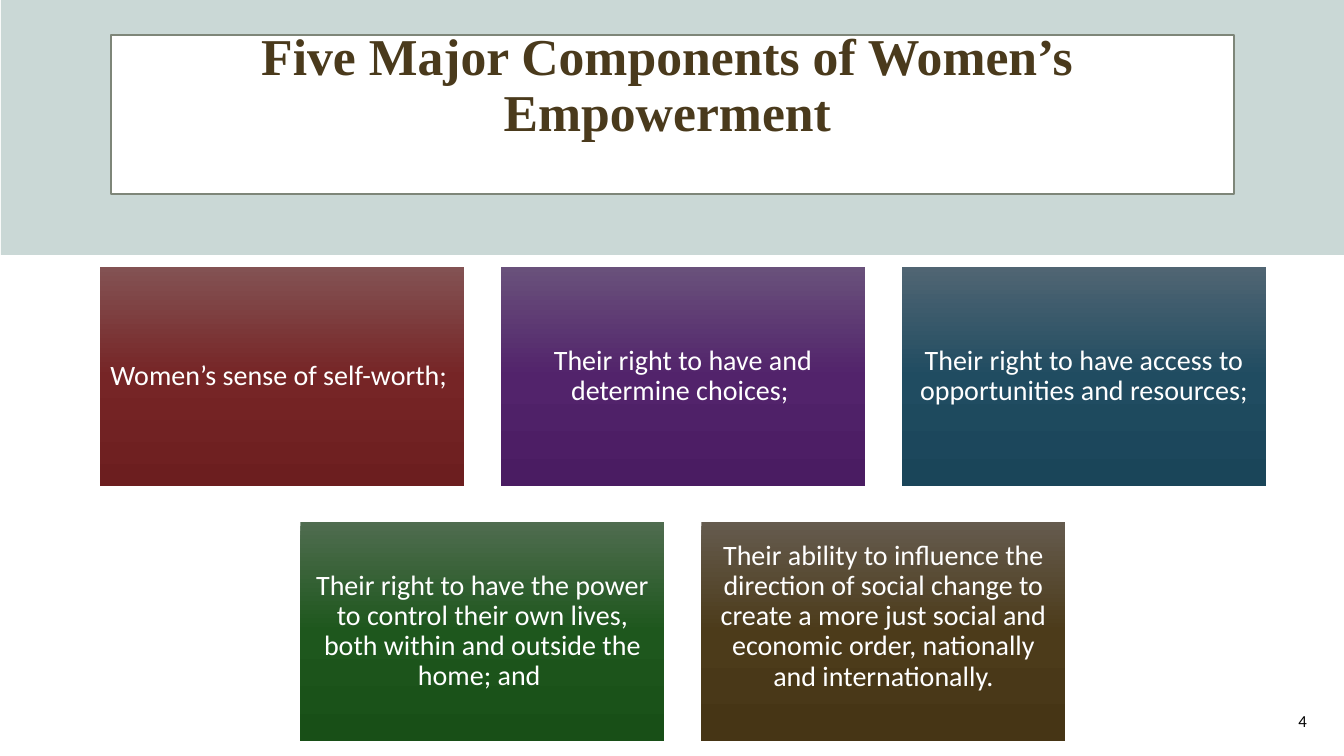
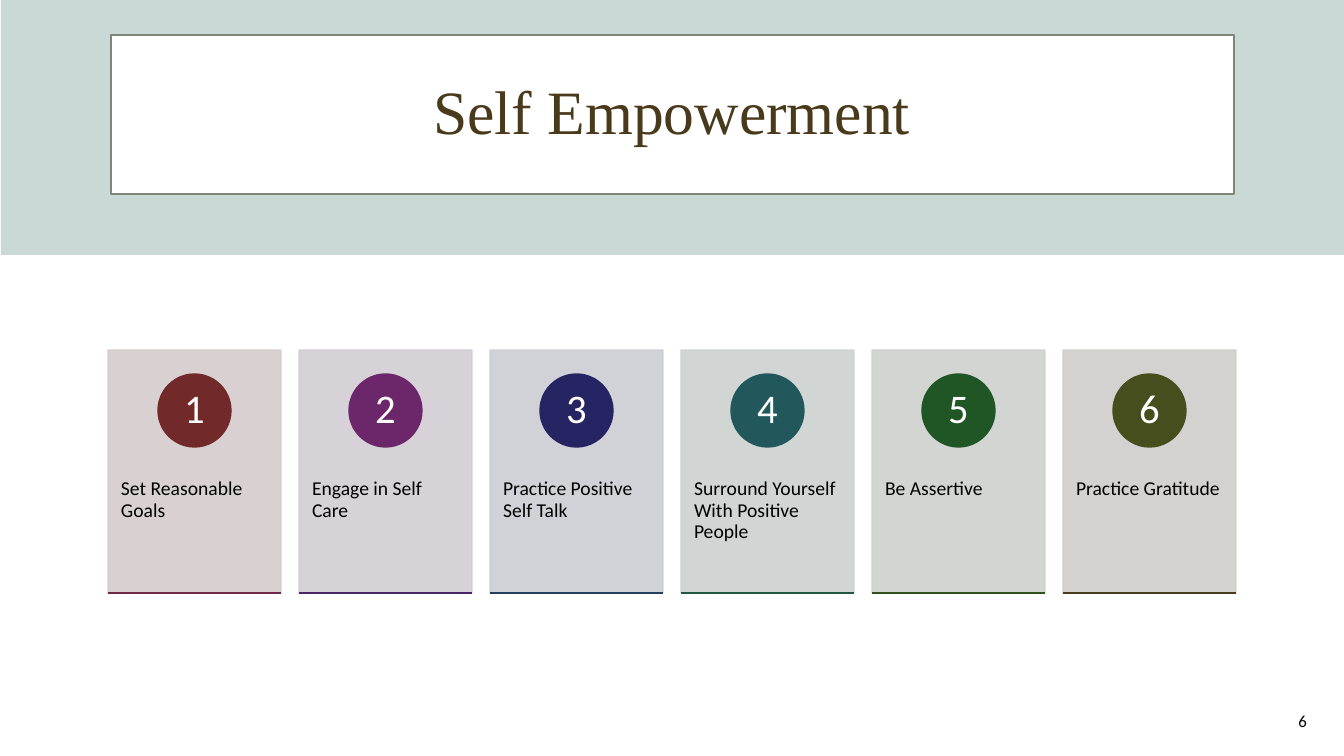
from copy import deepcopy

from pptx import Presentation
from pptx import util as u
from pptx.dml.color import RGBColor
from pptx.enum import shapes, text
from pptx.oxml.ns import qn

PX = 914400 / 100.8
SLIDE_WIDTH, SLIDE_HEIGHT = 1344, 756

WHITE = RGBColor(0xFF, 0xFF, 0xFF)
BLACK = RGBColor(0x00, 0x00, 0x00)
BAND = RGBColor(0xCA, 0xD8, 0xD6)
FRAME_LINE = RGBColor(0x7E, 0x86, 0x79)
TITLE_BROWN = RGBColor(0x4A, 0x3A, 0x1C)
REDS = RGBColor(0x83, 0x52, 0x53), RGBColor(0x76, 0x25, 0x26), RGBColor(0x6C, 0x1E, 0x1F)
PURPLES = RGBColor(0x69, 0x51, 0x7B), RGBColor(0x52, 0x23, 0x6B), RGBColor(0x4A, 0x1C, 0x62)
BLUES = RGBColor(0x50, 0x65, 0x73), RGBColor(0x20, 0x4C, 0x61), RGBColor(0x1A, 0x45, 0x59)
GREENS = RGBColor(0x4F, 0x6C, 0x4F), RGBColor(0x1E, 0x57, 0x1D), RGBColor(0x18, 0x4F, 0x17)
BROWNS = RGBColor(0x65, 0x5B, 0x4E), RGBColor(0x4C, 0x3B, 0x1A), RGBColor(0x46, 0x35, 0x15)

TITLE_FONT, BODY_FONT = "Times New Roman", "Calibri"
CENTER, RIGHT, LEFT = text.PP_ALIGN.CENTER, text.PP_ALIGN.RIGHT, text.PP_ALIGN.LEFT
MIDDLE, TOP = text.MSO_ANCHOR.MIDDLE, text.MSO_ANCHOR.TOP
RECTANGLE, OVAL = shapes.MSO_SHAPE.RECTANGLE, shapes.MSO_SHAPE.OVAL

COMPONENT_ROWS = [
    (267, [
        ("Women’s sense of self-worth; ", REDS, 8),
        ("Their right to have and determine choices; ", PURPLES, 8),
        ("Their right to have access to opportunities and resources;", BLUES, 8),
    ]),
    (522, [
        ("Their right to have the power to control their own lives, "
         "both within and outside the home; and ", GREENS, 8),
        ("Their ability to influence the direction of social change to create "
         "a more just social and economic order, nationally and internationally.",
         BROWNS, 38),
    ]),
]
CARD_WIDTH, CARD_HEIGHT, CARD_GAP, CARDS_CENTER = 364, 219, 37, 683

STEPS = [
    ("Set Reasonable Goals", "D5CDCD", "72292A", "6E284B"),
    ("Engage in Self Care", "D3CDD4", "6B276A", "482667"),
    ("Practice Positive Self Talk", "CDCED3", "272463", "233E60"),
    ("Surround Yourself With Positive People", "CDD2D0", "22585C", "215842"),
    ("Be Assertive", "CED1CD", "205525", "32511E"),
    ("Practice Gratitude", "CFCECC", "474E1D", "4A3A1C"),
]
PANEL_LEFT, PANEL_TOP, PANEL_WIDTH, PANEL_HEIGHT, PANEL_PITCH = 108, 350, 173, 243, 191
CIRCLE_SIZE, CIRCLE_TOP = 73, 374


def px(*lengths):
    return [u.Emu(round(length * PX)) for length in lengths]


def write(shape, words, size, color, font=BODY_FONT, align=CENTER, anchor=MIDDLE,
          insets=(8, 8, 8, 8), bold=False, spacing=0.9):
    frame = shape.text_frame
    frame.word_wrap = True
    frame.vertical_anchor = anchor
    (frame.margin_left, frame.margin_top,
     frame.margin_right, frame.margin_bottom) = px(*insets)
    paragraph = frame.paragraphs[0]
    paragraph.alignment = align
    paragraph.line_spacing = spacing
    run = paragraph.add_run()
    run.text = words
    run.font.name = font
    run.font.size = u.Pt(size)
    run.font.bold = bold
    run.font.color.rgb = color


def add_block(slide, kind, box, fill=None, line=None):
    shape = slide.shapes.add_shape(kind, *px(*box))
    shape.shadow.inherit = False
    if fill is not None:
        shape.fill.solid()
        shape.fill.fore_color.rgb = fill
    if line is None:
        shape.line.fill.background()
    else:
        shape.line.color.rgb = line
        shape.line.width = u.Pt(1)
    return shape


def fade_down(shape, colors):
    fill = shape.fill
    fill.gradient()
    fill.gradient_angle = 270
    stop_list = shape._element.spPr.find(".//" + qn("a:gsLst"))
    stop_list.append(deepcopy(stop_list[0]))
    for stop, color, position in zip(fill.gradient_stops, colors, (0, 0.5, 1)):
        stop.color.rgb = color
        stop.position = position


def make_translucent(shape, percent):
    for color in shape._element.spPr.iter(qn("a:srgbClr")):
        alpha = color.makeelement(qn("a:alpha"), {"val": str(percent * 1000)})
        color.append(alpha)


def add_rule(slide, left, right, y, color):
    rule = slide.shapes.add_connector(shapes.MSO_CONNECTOR.STRAIGHT, *px(left, y, right, y))
    rule.line.color.rgb = color
    rule.line.width = u.Pt(1)
    properties = rule._element.spPr
    properties.append(properties.makeelement(qn("a:effectLst"), {}))


def add_titled_slide(presentation, title, title_box, size, number, bold=False):
    slide = presentation.slides.add_slide(presentation.slide_layouts[6])
    add_block(slide, RECTANGLE, (1, 0, SLIDE_WIDTH - 1, 255), BAND)
    add_block(slide, RECTANGLE, (111, 35, 1123, 159), WHITE, FRAME_LINE)
    write(slide.shapes.add_textbox(*px(*title_box)), title, size, TITLE_BROWN,
          font=TITLE_FONT, bold=bold, insets=(10, 5, 10, 5))
    write(slide.shapes.add_textbox(*px(1015, 701, 302, 40)), number, 12, BLACK,
          align=RIGHT, insets=(10, 5, 10, 5), spacing=1.0)
    return slide


def build_components(presentation):
    slide = add_titled_slide(presentation, "Five Major Components of Women’s Empowerment",
                             (108, 14, 1119, 146), 36.9, "4", bold=True)
    for top, cards in COMPONENT_ROWS:
        row_width = len(cards) * (CARD_WIDTH + CARD_GAP) - CARD_GAP
        first_left = CARDS_CENTER - row_width / 2
        for index, (words, colors, bottom_inset) in enumerate(cards):
            left = first_left + index * (CARD_WIDTH + CARD_GAP)
            card = add_block(slide, RECTANGLE, (left, top, CARD_WIDTH, CARD_HEIGHT))
            fade_down(card, colors)
            write(card, words, 20, WHITE, insets=(8, 8, 8, bottom_inset))


def build_steps(presentation):
    slide = add_titled_slide(presentation, "Self Empowerment", (42, 42, 1260, 146), 44, "6")
    for index, (words, *hex_colors) in enumerate(STEPS):
        panel_color, circle_color, rule_color = map(RGBColor.from_string, hex_colors)
        left = PANEL_LEFT + index * PANEL_PITCH
        panel = add_block(slide, RECTANGLE, (left, PANEL_TOP, PANEL_WIDTH, PANEL_HEIGHT),
                          panel_color, panel_color)
        make_translucent(panel, 90)
        write(panel, words, 14, BLACK, align=LEFT, anchor=TOP, insets=(13, 129, 13, 10))
        circle_left = left + (PANEL_WIDTH - CIRCLE_SIZE) / 2
        circle = add_block(slide, OVAL, (circle_left, CIRCLE_TOP, CIRCLE_SIZE, CIRCLE_SIZE),
                           circle_color, circle_color)
        write(circle, str(index + 1), 29, WHITE, insets=(6, 1, 6, 1))
        add_rule(slide, left, left + PANEL_WIDTH, PANEL_TOP + PANEL_HEIGHT, rule_color)


def main():
    presentation = Presentation()
    presentation.slide_width, presentation.slide_height = px(SLIDE_WIDTH, SLIDE_HEIGHT)
    build_components(presentation)
    build_steps(presentation)
    presentation.save("out.pptx")


if __name__ == "__main__":
    main()
